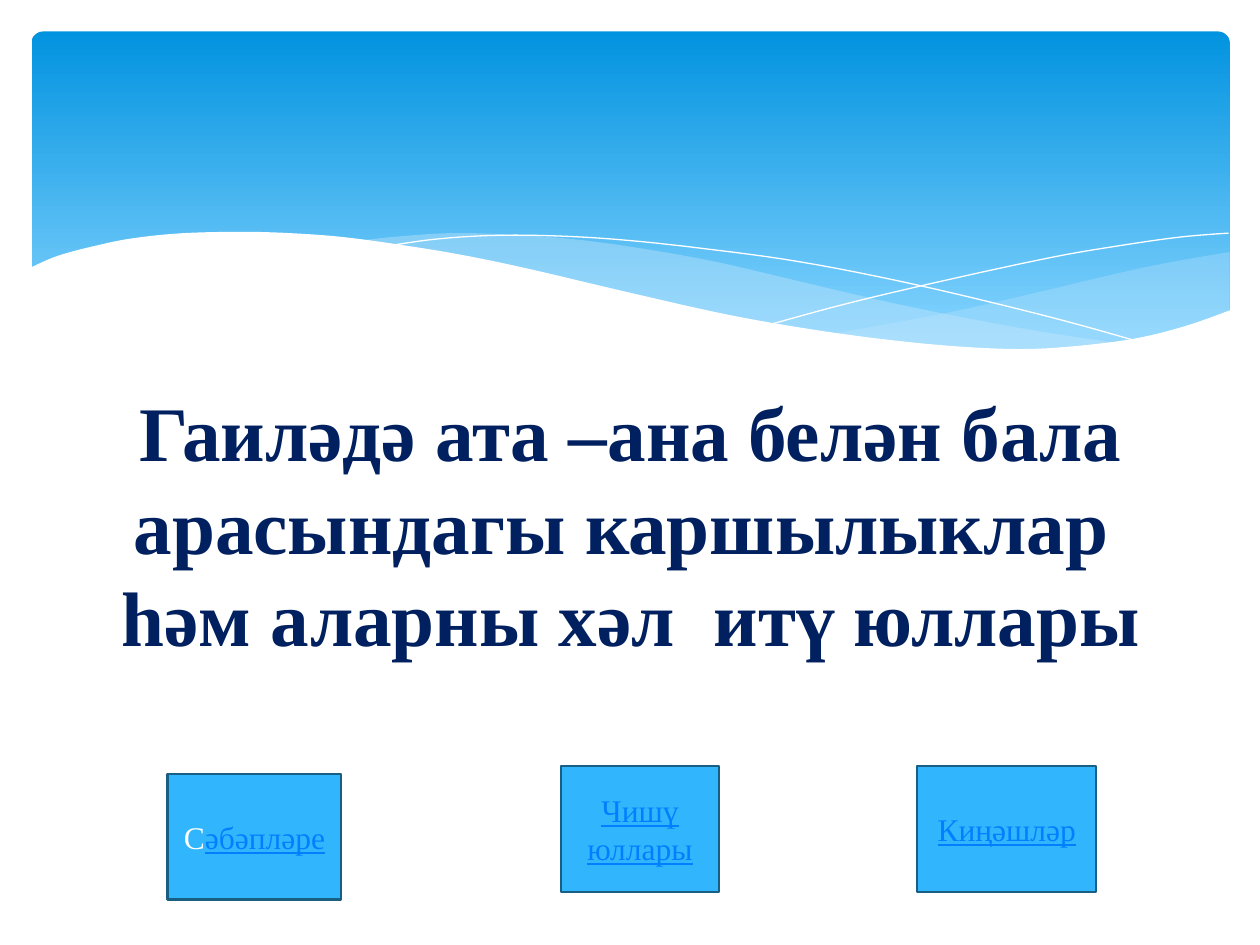
import pptx
import pptx.util
import pptx.dml.color
import pptx.enum.shapes
import pptx.enum.text
import pptx.oxml.ns
import lxml.etree

HUES = {
    "top": "0293E0", "low": "83D3FE", "mist": "C6E7FC", "white": "FFFFFF",
    "navy": "002060", "box": "31B6FD", "edge": "195F84", "link": "0080FF",
}
FONT = "Times New Roman"
TITLE = ("Гаиләдә ата –ана белән бала арасындагы каршылыклар \v"
         "һәм аларны хәл  итү юллары")

WAVES = [
    ("mist", 29, [
        [(9.76, 2), (9.35, 2.07), (8.91, 2.16), (8.32, 2.3), (7.53, 2.48),
         (6.61, 2.65)],
        [(6.61, 2.65), (7.05, 2.71), (7.57, 2.76), (8.03, 2.78), (8.54, 2.76),
         (8.97, 2.7), (9.35, 2.62), (9.76, 2.47)],
    ]),
    ("mist", 40, [
        [(8.93, 2.73), (8.37, 2.65), (7.75, 2.54), (7.06, 2.4), (6.29, 2.22),
         (5.69, 2.08), (5.14, 1.98), (4.65, 1.91), (4.2, 1.87), (3.61, 1.85),
         (3.13, 1.88), (2.86, 1.91)],
        [(2.86, 1.91), (3.42, 1.99), (4.04, 2.11), (4.49, 2.22), (5.3, 2.4),
         (6.01, 2.55), (6.65, 2.66), (7.22, 2.74), (7.73, 2.77), (8.18, 2.78),
         (8.57, 2.77), (8.93, 2.73)],
    ]),
    (None, 0, [
        [(3.09, 1.95), (3.44, 1.9), (3.87, 1.87), (4.33, 1.87), (4.89, 1.9),
         (5.56, 1.97), (6.36, 2.08), (7.27, 2.26), (8.31, 2.51), (9.07, 2.72)],
    ]),
    (None, 0, [
        [(6.13, 2.57), (6.72, 2.41), (7.48, 2.23), (8.36, 2.04), (8.95, 1.94),
         (9.38, 1.88), (9.75, 1.85)],
    ]),
    ("white", 100, [
        [(9.77, 2.46), (9.4, 2.59), (8.99, 2.69), (8.5, 2.75), (8.09, 2.77),
         (7.61, 2.75), (7.08, 2.7), (6.48, 2.62), (5.79, 2.5), (5.03, 2.33),
         (4.18, 2.13), (3.65, 2.02), (3.16, 1.94), (2.71, 1.88), (2.3, 1.85),
         (1.93, 1.84), (1.46, 1.85), (1.06, 1.89), (0.76, 1.95), (0.46, 2.03),
         (0.23, 2.13)],
        [(0.23, 3.29), (9.77, 3.29)],
    ]),
]

CARDS = [
    ((1.33, 6.14, 1.38, 1), [("С", "white"), ("әбәпләре", "link")]),
    ((4.45, 6.08, 1.26, 1), [("Чишү", "link"), (" ", "white"), ("юллары", "link")]),
    ((7.28, 6.08, 1.42, 1), [("Киңәшләр", "link")]),
]


def rgb(name):
    return pptx.dml.color.RGBColor.from_string(HUES[name])


def place(box):
    return [pptx.util.Inches(side) for side in box]


def bend(knots, steps=6):
    ends = [knots[0]] + knots + [knots[-1]]
    dots = [knots[0]]
    for a, b, c, d in zip(ends, ends[1:], ends[2:], ends[3:]):
        for step in range(1, steps + 1):
            t = step / steps
            dots.append(tuple(
                q + t / 2 * (r - p + t * (2*p - 5*q + 4*r - s + t * (3*q - p - 3*r + s)))
                for p, q, r, s in zip(a, b, c, d)))
    return dots


def draw_wave(shapes, fill, clear, curves):
    dots = [place(dot) for curve in curves for dot in bend(curve)]
    pen = shapes.build_freeform(*dots[0], scale=1.0)
    pen.add_line_segments(dots[1:], close=fill is not None)
    wave = pen.convert_to_shape()
    wave.shadow.inherit = False
    if fill is None:
        wave.fill.background()
        wave.line.color.rgb = rgb("white")
        wave.line.width = pptx.util.Pt(0)
        return
    wave.fill.solid()
    wave.fill.fore_color.rgb = rgb(fill)
    wave.line.fill.background()
    if clear < 100:
        qn = pptx.oxml.ns.qn
        tint = wave.fill._xPr.find(qn("a:solidFill")).find(qn("a:srgbClr"))
        lxml.etree.SubElement(tint, qn("a:alpha")).set("val", str(clear * 1000))


def draw_band(shapes):
    band = shapes.add_shape(pptx.enum.shapes.MSO_SHAPE.ROUNDED_RECTANGLE,
                            *place((0.25, 0.25, 9.51, 2.7)))
    band.adjustments[0] = 0.034
    band.shadow.inherit = False
    band.line.fill.background()
    band.fill.gradient()
    band.fill.gradient_angle = 270
    for stop, spot, name in zip(band.fill.gradient_stops, (0, 0.9), ("top", "low")):
        stop.position = spot
        stop.color.rgb = rgb(name)


def draw_title(shapes):
    frame = shapes.add_textbox(*place((0.51, 3.05, 9, 2.25))).text_frame
    frame.word_wrap = True
    frame.margin_top = frame.margin_bottom = 0
    para = frame.paragraphs[0]
    para.text = TITLE
    para.alignment = pptx.enum.text.PP_ALIGN.CENTER
    para.line_spacing = pptx.util.Pt(52.9)
    para.font.name = FONT
    para.font.size = pptx.util.Pt(44.1)
    para.font.bold = True
    para.font.color.rgb = rgb("navy")


def draw_card(shapes, box, words):
    card = shapes.add_shape(pptx.enum.shapes.MSO_SHAPE.RECTANGLE, *place(box))
    card.shadow.inherit = False
    card.fill.solid()
    card.fill.fore_color.rgb = rgb("box")
    card.line.color.rgb = rgb("edge")
    card.line.width = pptx.util.Pt(1.25)
    card.text_frame.word_wrap = True
    card.text_frame.vertical_anchor = pptx.enum.text.MSO_ANCHOR.MIDDLE
    para = card.text_frame.paragraphs[0]
    para.alignment = pptx.enum.text.PP_ALIGN.CENTER
    para.font.name = FONT
    para.font.size = pptx.util.Pt(18)
    for text, name in words:
        run = para.add_run()
        run.text = text
        run.font.color.rgb = rgb(name)
        run.font.underline = name == "link"


def main():
    deck = pptx.Presentation()
    deck.slide_width, deck.slide_height = place((10, 7.5))
    shapes = deck.slides.add_slide(deck.slide_layouts[6]).shapes
    draw_band(shapes)
    for wave in WAVES:
        draw_wave(shapes, *wave)
    draw_title(shapes)
    for card in CARDS:
        draw_card(shapes, *card)
    deck.save("out.pptx")


if __name__ == "__main__":
    main()
